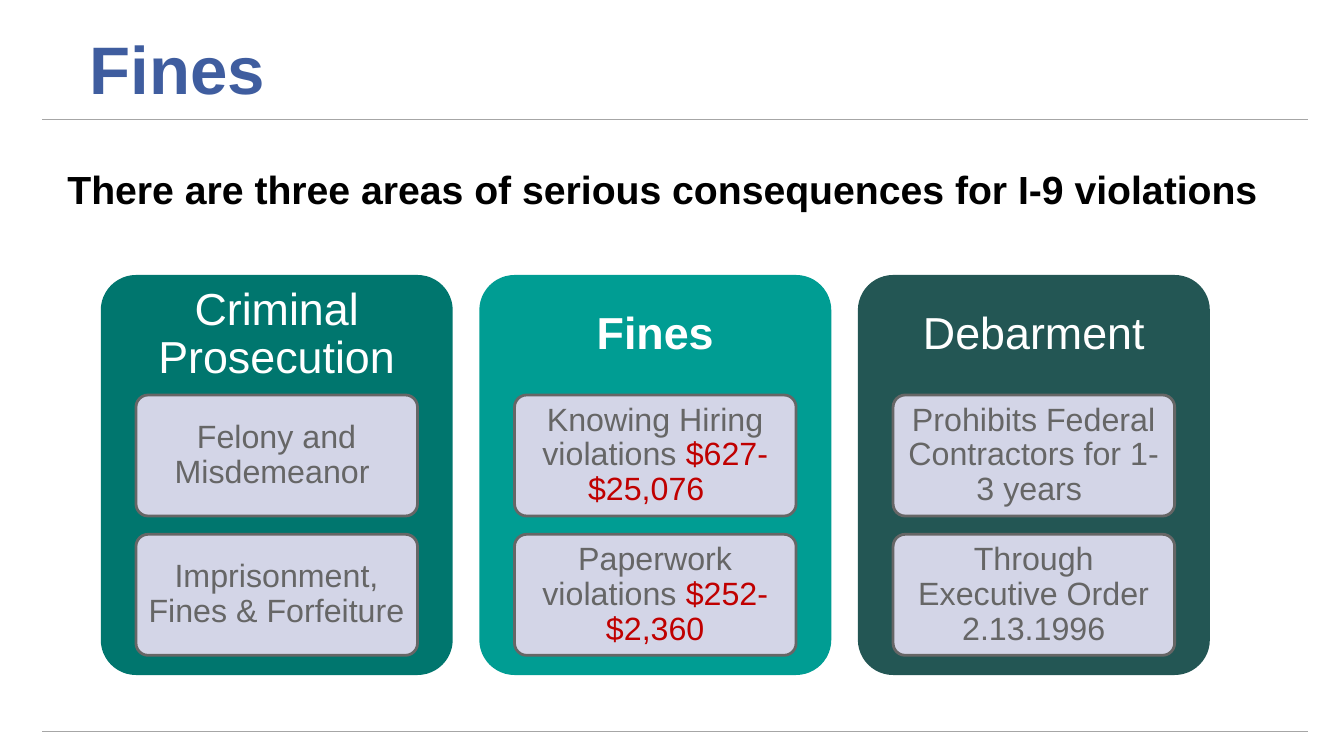
from lxml import etree
from pptx import Presentation
from pptx.dml.color import RGBColor
from pptx.enum import shapes, text
from pptx.oxml import ns
from pptx.util import Cm, Pt

WHITE = RGBColor(0xFF, 0xFF, 0xFF)
BLACK = RGBColor(0x00, 0x00, 0x00)
BLUE = RGBColor(0x3F, 0x5D, 0x9F)
RULE_GRAY = RGBColor(0xA6, 0xA6, 0xA6)
GRAY = RGBColor(0x66, 0x66, 0x66)
LAVENDER = RGBColor(0xD3, 0xD5, 0xE7)
RED = RGBColor(0xC0, 0x00, 0x00)
GREEN = RGBColor(0x00, 0x76, 0x6E)
TEAL = RGBColor(0x00, 0x9D, 0x93)
DARK_TEAL = RGBColor(0x23, 0x56, 0x54)

TITLE = {"size": Pt(48), "bold": True}
LEAD = {"size": Pt(28), "bold": True}
HEADING = {"size": Pt(32), "bold": False}
DETAIL = {"size": Pt(23), "bold": False}

AREAS = [
    ("Criminal Prosecution", GREEN, False, [
        [("Felony and Misdemeanor ", GRAY)],
        [("Imprisonment, Fines & Forfeiture", GRAY)]]),
    ("Fines", TEAL, True, [
        [("Knowing Hiring violations ", GRAY), ("$627- $25,076  ", RED)],
        [("Paperwork violations ", GRAY), ("$252-$2,360", RED)]]),
    ("Debarment", DARK_TEAL, False, [
        [("Prohibits Federal Contractors for 1-3 years ", GRAY)],
        [("Through Executive Order 2.13.1996", GRAY)]]),
]


def write(holder, parts, style, align, anchor, pad=(0, 0), spacing=0.9):
    """Write coloured parts as one paragraph in the holder's text frame."""
    frame = holder.text_frame
    layout = {"word_wrap": True, "auto_size": text.MSO_AUTO_SIZE.NONE,
              "vertical_anchor": anchor,
              "margin_left": Cm(pad[0]), "margin_right": Cm(pad[0]),
              "margin_top": Cm(pad[1]), "margin_bottom": Cm(pad[1])}
    for name, value in layout.items():
        setattr(frame, name, value)
    line = frame.paragraphs[0]
    line.alignment = align
    line.line_spacing = spacing
    for words, color in parts:
        run = line.add_run()
        run.text = words
        run.font.color.rgb = color
        for name, value in {"name": "Arial", **style}.items():
            setattr(run.font, name, value)


def add_rule(slide, left, top, width):
    """Draw a thin horizontal rule."""
    rule = slide.shapes.add_connector(
        shapes.MSO_CONNECTOR.STRAIGHT, Cm(left), Cm(top), Cm(left + width), Cm(top))
    rule.line.color.rgb = RULE_GRAY
    rule.line.width = Pt(0.5)
    etree.SubElement(rule._element.spPr, ns.qn("a:effectLst"))


def add_panel(slide, left, top, width, height, fill):
    """Draw a borderless rounded panel."""
    panel = slide.shapes.add_shape(
        shapes.MSO_SHAPE.ROUNDED_RECTANGLE, Cm(left), Cm(top), Cm(width), Cm(height))
    panel.adjustments[0] = 0.1
    panel.shadow.inherit = False
    panel.fill.solid()
    panel.fill.fore_color.rgb = fill
    panel.line.fill.background()
    return panel


def add_header(slide, left, top, width):
    """Place the title and the lead sentence."""
    title = slide.shapes.title
    box = {"left": Cm(left + 0.56), "top": Cm(top), "width": Cm(width - 0.56), "height": Cm(1.98)}
    for name, value in box.items():
        setattr(title, name, value)
    write(title, [("Fines", BLUE)], TITLE, text.PP_ALIGN.LEFT, text.MSO_ANCHOR.BOTTOM)
    lead = slide.shapes.add_textbox(Cm(left), Cm(top + 3.41), Cm(width), Cm(2.54))
    sentence = "There are three areas of serious consequences for I-9 violations"
    write(lead, [(sentence, BLACK)], LEAD, text.PP_ALIGN.LEFT, text.MSO_ANCHOR.TOP, spacing=1.0)


def add_area(slide, left, top, width, height, area):
    """Place one consequence area: panel, heading and its details."""
    name, fill, bold, details = area
    centered = (text.PP_ALIGN.CENTER, text.MSO_ANCHOR.MIDDLE)
    heading_height = height * 0.3
    add_panel(slide, left, top, width, height, fill)
    heading = slide.shapes.add_textbox(Cm(left), Cm(top), Cm(width), Cm(heading_height))
    write(heading, [(name, WHITE)], {**HEADING, "bold": bold}, *centered, pad=(0.33, 0.33))
    for row, parts in enumerate(details):
        detail = add_panel(slide, left + width * 0.1, top + heading_height + row * 3.51,
                           width * 0.8, 3.05, LAVENDER)
        detail.line.color.rgb = GRAY
        detail.line.width = Pt(2)
        write(detail, parts, DETAIL, *centered, pad=(0.15, 0.13))


def main():
    """Build the slide and save it."""
    deck = Presentation()
    deck.slide_width, deck.slide_height = Cm(33.87), Cm(19.05)
    slide = deck.slides.add_slide(deck.slide_layouts.get_by_name("Title Only"))
    for top in (3.02, 18.42):
        add_rule(slide, 1.07, top, 31.9)
    add_header(slide, 1.7, 0.76, 30.48)
    for column, area in enumerate(AREAS):
        add_area(slide, 2.54 + column * 9.54, 6.93, 8.87, 10.08, area)
    deck.save("out.pptx")


if __name__ == "__main__":
    main()
